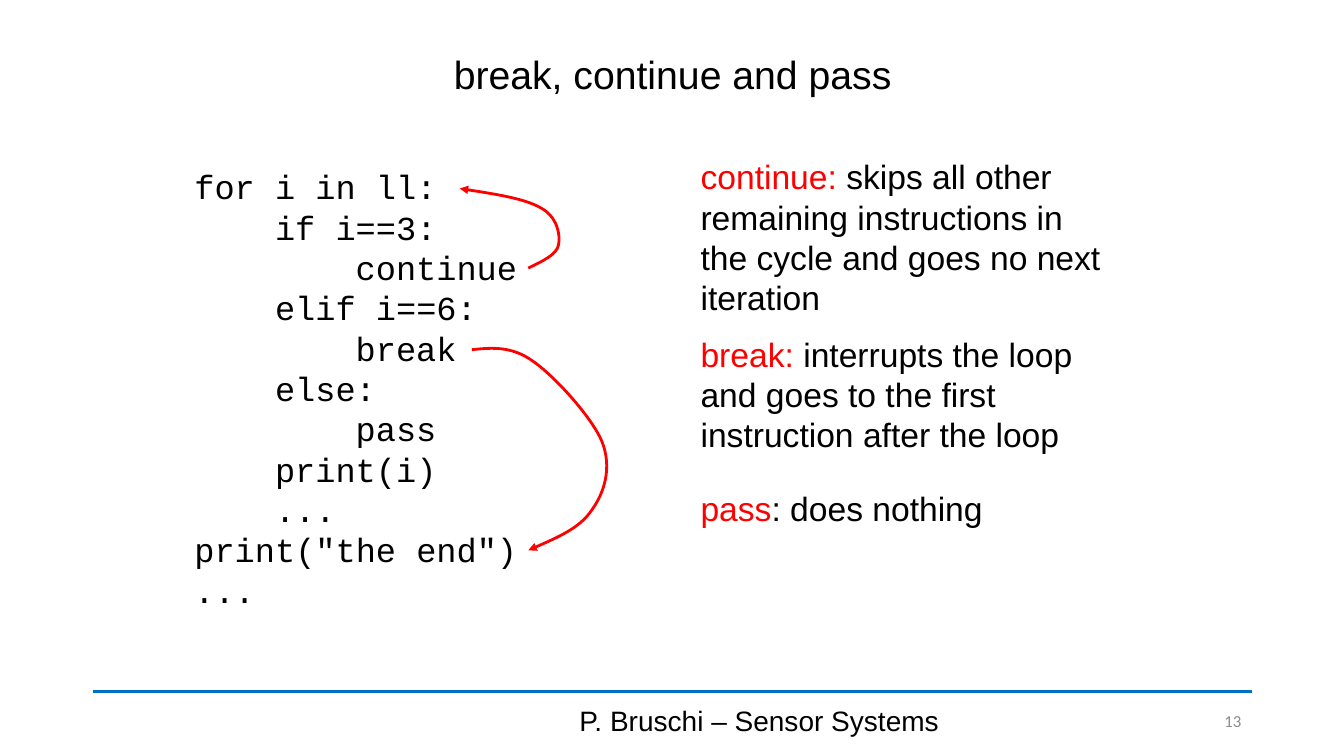
from lxml import etree
from pptx import Presentation
from pptx.dml.color import RGBColor
from pptx.enum.shapes import MSO_CONNECTOR
from pptx.enum.text import MSO_ANCHOR, MSO_AUTO_SIZE, PP_ALIGN
from pptx.oxml.ns import qn
from pptx.util import Inches, Pt

BLACK, RED, BLUE, GRAY = "000000", "FF0000", "0070C0", "8C8C8C"


def style(span, size, color=BLACK, font="Arial"):
    span.font.size = Pt(size)
    span.font.name = font
    span.font.color.rgb = RGBColor.from_string(color)


def add_box(left, top, width, height):
    box = page.shapes.add_textbox(Inches(left), Inches(top), Inches(width), Inches(height))
    box.text_frame.word_wrap = True
    return box.text_frame


deck = Presentation()
deck.slide_width, deck.slide_height = Inches(13.33), Inches(7.5)
page = deck.slides.add_slide(deck.slide_layouts[5])

rule = page.shapes.add_connector(
    MSO_CONNECTOR.STRAIGHT, Inches(0.92), Inches(6.86), Inches(12.42), Inches(6.86))
rule.line.color.rgb = RGBColor.from_string(BLUE)
rule.line.width = Pt(2.75)
etree.SubElement(rule._element.spPr, qn("a:effectLst"))

title = page.shapes.title
title.left, title.top = Inches(0.92), Inches(0.4)
title.width, title.height = Inches(11.5), Inches(0.72)
title.text_frame.text = "break, continue and pass"
title.text_frame.vertical_anchor = MSO_ANCHOR.MIDDLE
para = title.text_frame.paragraphs[0]
para.alignment = PP_ALIGN.CENTER
para.line_spacing = 0.9
style(para.runs[0], 28)

footers = [
    (4.42, 6.22, "P. Bruschi – Sensor Systems", PP_ALIGN.CENTER, 20, BLACK, "Arial"),
    (11.45, 0.96, "13", PP_ALIGN.RIGHT, 12, GRAY, "Calibri"),
]
for left, width, text, align, size, color, font in footers:
    frame = add_box(left, 6.95, width, 0.4)
    frame.vertical_anchor = MSO_ANCHOR.MIDDLE
    frame.text = text
    frame.paragraphs[0].alignment = align
    style(frame.paragraphs[0].runs[0], size, color, font)

code_lines = [
    (0, "for i in ll:"),
    (1, "if i==3:"),
    (2, "continue"),
    (1, "elif i==6:"),
    (2, "break"),
    (1, "else:"),
    (2, "pass"),
    (1, "print(i)"),
    (1, "..."),
    (0, 'print("the end")'),
    (0, "..."),
]
frame = add_box(1.83, 1.6, 7.8, 4.54)
frame.auto_size = MSO_AUTO_SIZE.SHAPE_TO_FIT_TEXT
frame.text = "\n".join(text for level, text in code_lines)
for para, (level, text) in zip(frame.paragraphs, code_lines):
    properties = para._p.get_or_add_pPr()
    properties.set("marL", str(Inches(0.8 * level)))
    properties.set("indent", "0")
    para.line_spacing = Pt(28.8)
    style(para.runs[0], 24, font="Courier New")

notes = [
    (1.5, 1.72, "continue:",
     " skips all other remaining instructions in the cycle and goes no next iteration"),
    (3.26, 1.31, "break:",
     " interrupts the loop and goes to the first instruction after the loop"),
    (4.79, 0.5, "pass", ": does nothing"),
]
for top, height, keyword, meaning in notes:
    frame = add_box(6.85, top, 4.28, height)
    frame.auto_size = MSO_AUTO_SIZE.SHAPE_TO_FIT_TEXT
    para = frame.paragraphs[0]
    para.line_spacing = Pt(28.8)
    for text, color in ((keyword, RED), (meaning, BLACK)):
        span = para.add_run()
        span.text = text
        style(span, 24, color)

jumps = [
    [(5.24, 2.66), (5.38, 2.59), (5.52, 2.53), (5.54, 2.43),
     (5.56, 2.33), (5.53, 2.15), (5.36, 2.06),
     (5.2, 1.97), (4.88, 1.92), (4.56, 1.87)],
    [(4.68, 3.47), (4.87, 3.45), (5.07, 3.43), (5.28, 3.58),
     (5.5, 3.73), (5.87, 4.14), (5.97, 4.38),
     (6.07, 4.63), (6, 4.88), (5.87, 5.06),
     (5.75, 5.24), (5.49, 5.35), (5.24, 5.46)],
]
for jump in jumps:
    points = [(Inches(x), Inches(y)) for x, y in jump]
    builder = page.shapes.build_freeform(*points[0])
    builder.add_line_segments(points[1:], close=False)
    arrow = builder.convert_to_shape()
    arrow.shadow.inherit = False
    arrow.fill.background()
    arrow.line.color.rgb = RGBColor.from_string(RED)
    arrow.line.width = Pt(2)
    etree.SubElement(arrow.line._get_or_add_ln(), qn("a:tailEnd"), type="triangle")
    outline = next(arrow._element.iter(qn("a:path")))
    segments = outline.findall(qn("a:lnTo"))
    for first in range(0, len(segments), 3):
        curve = etree.SubElement(outline, qn("a:cubicBezTo"))
        for segment in segments[first:first + 3]:
            curve.append(segment[0])
            outline.remove(segment)

deck.save("out.pptx")
